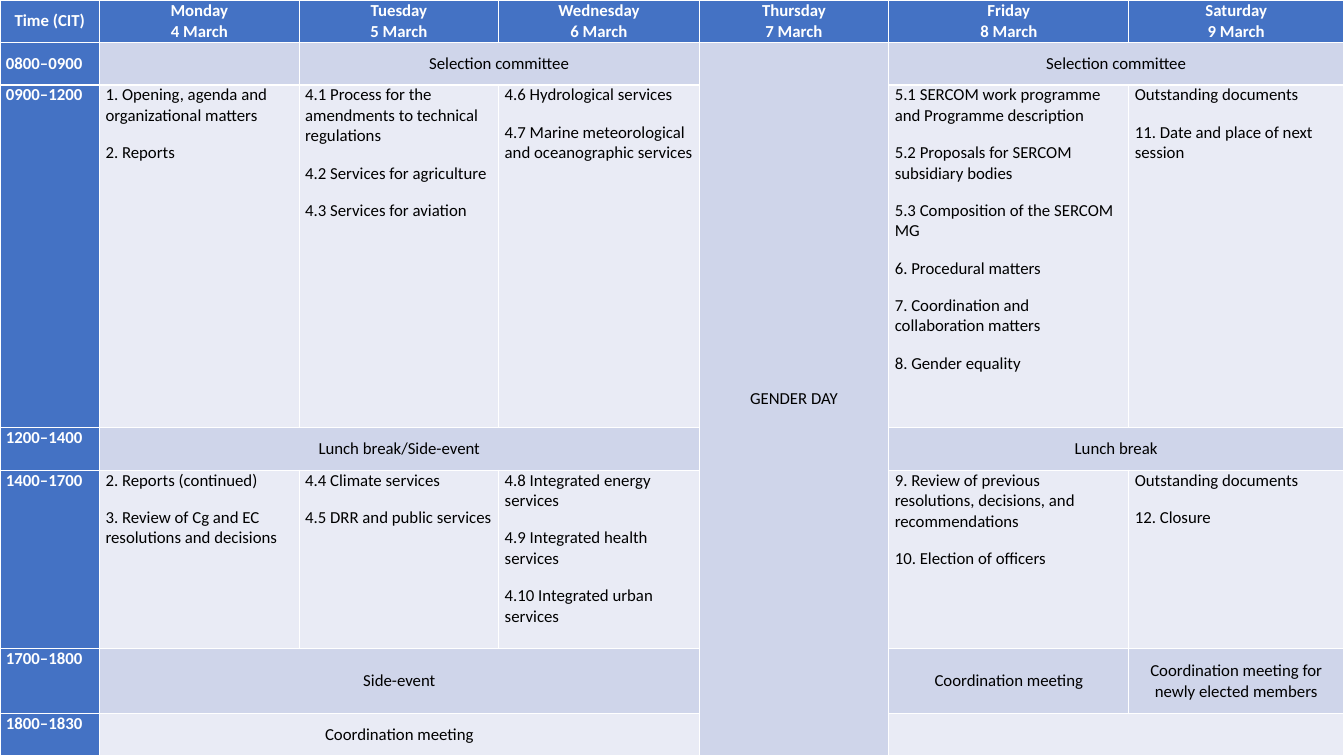
from pptx import Presentation
from pptx.dml.color import RGBColor
from pptx.enum.text import MSO_ANCHOR, PP_ALIGN
from pptx.util import Cm, Pt

BLUE = RGBColor(0x44, 0x72, 0xC4)
BAND = RGBColor(0xCF, 0xD5, 0xEA)
PALE = RGBColor(0xE9, 0xEB, 0xF5)
WHITE = RGBColor(0xFF, 0xFF, 0xFF)
BLACK = RGBColor(0x00, 0x00, 0x00)

COLUMN_WIDTHS = [2.51, 5.03, 5.03, 5.05, 4.78, 6.05, 5.41]
ROW_HEIGHTS = [1.07, 1.07, 8.64, 1.07, 4.5, 1.63, 1.07]
DAYS = ["Monday", "Tuesday", "Wednesday", "Thursday", "Friday", "Saturday"]
TIMES = ["0800–0900", "0900–1200", "1200–1400", "1400–1700", "1700–1800", "1800–1830"]
SESSION_ROWS = (2, 4)
BAND_ROWS = (1, 3, 5)

# Agenda entries by (row, column), one paragraph per item
entries = {
    (1, 2): ["Selection committee"],
    (1, 4): ["GENDER DAY"],
    (1, 5): ["Selection committee"],
    (2, 1): ["1. Opening, agenda and organizational matters", "2. Reports"],
    (2, 2): ["4.1 Process for the amendments to technical regulations",
             "4.2 Services for agriculture", "4.3 Services for aviation"],
    (2, 3): ["4.6 Hydrological services",
             "4.7 Marine meteorological and oceanographic services"],
    (2, 5): ["5.1 SERCOM work programme and Programme description",
             "5.2 Proposals for SERCOM subsidiary bodies",
             "5.3 Composition of the SERCOM MG", "6. Procedural matters",
             "7. Coordination and collaboration matters", "8. Gender equality"],
    (2, 6): ["Outstanding documents", "11. Date and place of next session"],
    (3, 1): ["Lunch break/Side-event"],
    (3, 5): ["Lunch break"],
    (4, 1): ["2. Reports (continued)", "3. Review of Cg and EC resolutions and decisions"],
    (4, 2): ["4.4 Climate services", "4.5 DRR and public services"],
    (4, 3): ["4.8 Integrated energy services", "4.9 Integrated health services",
             "4.10 Integrated urban services"],
    (4, 5): ["9. Review of previous resolutions, decisions, and recommendations",
             "10. Election of officers"],
    (4, 6): ["Outstanding documents", "12. Closure"],
    (5, 1): ["Side-event"],
    (5, 5): ["Coordination meeting"],
    (5, 6): ["Coordination meeting for newly elected members"],
    (6, 1): ["Coordination meeting"],
}
# Headings: days across the top, times down the side
entries[0, 0] = ["Time (CIT)"]
for column, day in enumerate(DAYS, start=1):
    entries[0, column] = [f"{day}\v{column + 3} March"]
for row, time in enumerate(TIMES, start=1):
    entries[row, 0] = [time]

# First and last cell of each merged block
MERGES = [((1, 2), (1, 3)), ((1, 4), (6, 4)), ((1, 5), (1, 6)),
          ((3, 1), (3, 3)), ((3, 5), (3, 6)), ((5, 1), (5, 3)),
          ((6, 1), (6, 3)), ((6, 5), (6, 6))]

presentation = Presentation()
presentation.slide_width = Cm(33.87)
presentation.slide_height = Cm(19.05)
slide = presentation.slides.add_slide(presentation.slide_layouts[6])

# Timetable grid; the table style supplies the white borders
table = slide.shapes.add_table(
    len(ROW_HEIGHTS), len(COLUMN_WIDTHS), Cm(0), Cm(0),
    presentation.slide_width, presentation.slide_height).table
table.first_col = True
table.horz_banding = False
for column, width in enumerate(COLUMN_WIDTHS):
    table.columns[column].width = Cm(width)
for row, height in enumerate(ROW_HEIGHTS):
    table.rows[row].height = Cm(height)
for first, last in MERGES:
    table.cell(*first).merge(table.cell(*last))

# Cell fills and text
for row in range(len(ROW_HEIGHTS)):
    for column in range(len(COLUMN_WIDTHS)):
        cell = table.cell(row, column)
        heading = row == 0 or column == 0
        centred = row == 0 or (column > 0 and row not in SESSION_ROWS)
        cell.fill.solid()
        if heading:
            cell.fill.fore_color.rgb = BLUE
        else:
            cell.fill.fore_color.rgb = BAND if row in BAND_ROWS or column == 4 else PALE
        cell.margin_left = cell.margin_right = Cm(0.15)
        cell.margin_top = cell.margin_bottom = Cm(0)
        cell.vertical_anchor = MSO_ANCHOR.MIDDLE if centred or row == 1 else MSO_ANCHOR.TOP
        for index, item in enumerate(entries.get((row, column), [])):
            frame = cell.text_frame
            paragraph = frame.add_paragraph() if index else frame.paragraphs[0]
            paragraph.text = item
            paragraph.alignment = PP_ALIGN.CENTER if centred else PP_ALIGN.LEFT
            paragraph.space_before = Pt(12 if index else 0)
            paragraph.font.name = "Calibri"
            paragraph.font.size = Pt(12)
            paragraph.font.bold = heading
            paragraph.font.color.rgb = WHITE if heading else BLACK

presentation.save("out.pptx")
